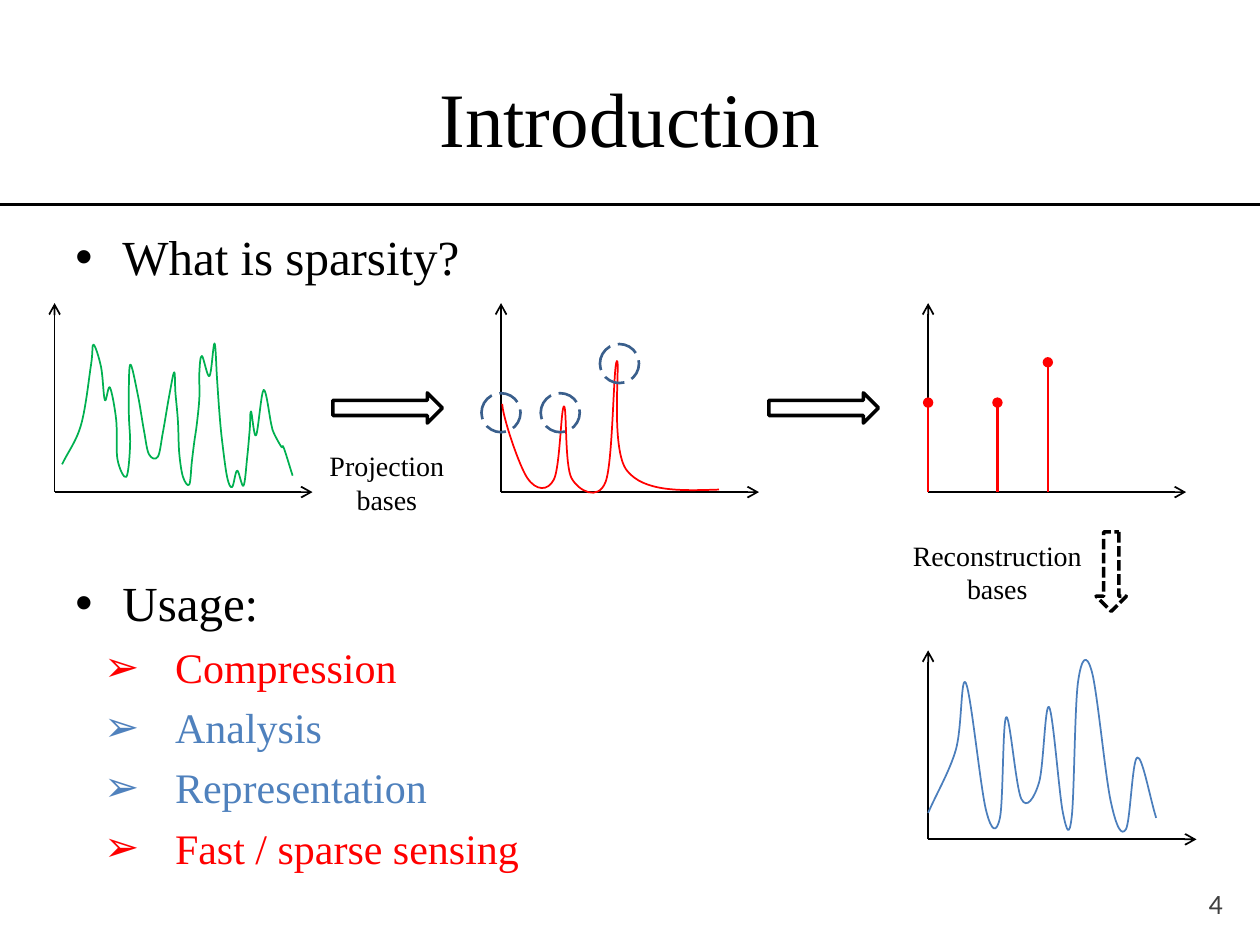
from lxml import etree
from pptx import Presentation
from pptx.dml.color import RGBColor
from pptx.enum.dml import MSO_LINE
from pptx.enum.shapes import MSO_CONNECTOR, MSO_SHAPE
from pptx.enum.text import MSO_ANCHOR, PP_ALIGN
from pptx.oxml.ns import qn
from pptx.util import Cm, Pt

BLACK = RGBColor(0x00, 0x00, 0x00)
GRAY = RGBColor(0x40, 0x40, 0x40)
RED = RGBColor(0xFF, 0x00, 0x00)
GREEN = RGBColor(0x00, 0xB0, 0x50)
BLUE = RGBColor(0x4F, 0x81, 0xBD)
CURVE_BLUE = RGBColor(0x4B, 0x7E, 0xBC)
CIRCLE_BLUE = RGBColor(0x3A, 0x5F, 0x8C)

STRAIGHT = MSO_CONNECTOR.STRAIGHT
RIGHT_ARROW, OVAL = MSO_SHAPE.RIGHT_ARROW, MSO_SHAPE.OVAL
LONG_DASH, SHORT_DASH = MSO_LINE.LONG_DASH, MSO_LINE.SQUARE_DOT
LEFT, CENTER, RIGHT = PP_ALIGN.LEFT, PP_ALIGN.CENTER, PP_ALIGN.RIGHT
TOP, MIDDLE = MSO_ANCHOR.TOP, MSO_ANCHOR.MIDDLE

SERIF = "Times New Roman"
UNIT = Cm(0.0254)

DENSE_SIGNAL = [
    (6, 22), (21, 53), (29, 101), (31, 117), (37, 99), (40, 73), (44, 83), (49, 57), (50, 26), (57, 12),
    (60, 37), (59, 64), (60, 101), (66, 78), (71, 49), (75, 30), (82, 28), (86, 47), (91, 76), (95, 95),
    (96, 79), (98, 56), (99, 31), (102, 12), (107, 6), (109, 24), (111, 40), (113, 54), (115, 75), (115, 95),
    (117, 108), (123, 92), (127, 118), (129, 90), (131, 62), (133, 41), (137, 12), (141, 4), (145, 17), (150, 5),
    (153, 28), (155, 50), (156, 64), (160, 45), (166, 81), (172, 54), (174, 47), (180, 36), (182, 35), (189, 13),
]
PROJECTED_SIGNAL = [
    (1, 70), (21, 11), (42, 10), (50, 68), (56, 11), (83, 8), (92, 104), (100, 17), (173, 2),
]
PROJECTED_HANDLES = [(1, 61), (143, 1)]
REBUILT_SIGNAL = [
    (0, 21), (22, 71), (30, 124), (46, 23), (57, 17), (62, 97), (74, 32), (88, 45), (96, 105),
    (107, 21), (114, 18), (119, 125), (130, 133), (145, 30), (157, 8), (166, 65), (181, 17),
]
PEAKS = [(0, 63), (47, 63), (94, 102)]
PEAK_DIAMETER = 31
STEMS = [(0, 71), (55, 71), (95, 103)]
USAGES = [("Compression", RED), ("Analysis", BLUE), ("Representation", BLUE), ("Fast / sparse sensing", RED)]


def add_line(slide, start, end, color, width, tail=None):
    """Draw a straight line with an optional end marker."""
    line = slide.shapes.add_connector(STRAIGHT, *start, *end)
    line.line.color.rgb = color
    line.line.width = Pt(width)
    if tail:
        etree.SubElement(line.line._get_or_add_ln(), qn("a:tailEnd"), type=tail)
    etree.SubElement(line._element.spPr, qn("a:effectLst"))


def style_outline(shape, color, width):
    """Leave a shape unfilled and set its outline."""
    shape.shadow.inherit = False
    shape.fill.background()
    shape.line.color.rgb = color
    shape.line.width = Pt(width)


def add_outline(slide, kind, box, color, width, dash=None):
    """Draw an unfilled preset shape."""
    shape = slide.shapes.add_shape(kind, *box)
    style_outline(shape, color, width)
    if dash:
        shape.line.dash_style = dash
    return shape


def add_text(slide, box, lines, size, color=BLACK, font=SERIF, align=CENTER, anchor=TOP):
    """Place a text box whose paragraphs share one style."""
    frame = slide.shapes.add_textbox(*box).text_frame
    frame.word_wrap = True
    frame.vertical_anchor = anchor
    frame.text = "\n".join(lines)
    for paragraph in frame.paragraphs:
        paragraph.alignment = align
        paragraph.font.name = font
        paragraph.font.size = Pt(size)
        paragraph.font.color.rgb = color
    return frame


def set_bullet(paragraph, character, margin, indent):
    """Give a paragraph a bullet character and a hanging indent."""
    properties = paragraph._p.get_or_add_pPr()
    properties.set("marL", str(margin))
    properties.set("indent", str(-indent))
    etree.SubElement(properties, qn("a:buFont"), typeface="Arial")
    etree.SubElement(properties, qn("a:buChar"), char=character)


def curve_handles(knots, end_handles):
    """Return the two control points of each smooth segment between knots."""
    last = len(knots) - 1
    slopes = []
    for index in range(last + 1):
        before, after = max(index - 1, 0), min(index + 1, last)
        divisor = 3 * (after - before)
        slopes.append([(b - a) / divisor for a, b in zip(knots[before], knots[after])])
    handles = []
    for index in range(last):
        leaving = tuple(a + m for a, m in zip(knots[index], slopes[index]))
        arriving = tuple(b - n for b, n in zip(knots[index + 1], slopes[index + 1]))
        handles.append([leaving, arriving])
    if end_handles:
        handles[0][0], handles[-1][1] = end_handles
    return handles


def add_curve(slide, knots, end_handles, locate, color):
    """Draw a smooth open curve through the knots."""
    points = [locate(knot) for knot in knots]
    builder = slide.shapes.build_freeform(*points[0])
    builder.add_line_segments(points[1:], close=False)
    curve = builder.convert_to_shape()
    style_outline(curve, color, 1)
    segments = list(curve._element.iter(qn("a:lnTo")))
    for segment, pair in zip(segments, curve_handles(knots, end_handles)):
        segment.tag = qn("a:cubicBezTo")
        for position, handle in enumerate(pair):
            x, y = locate(handle)
            point = etree.Element(qn("a:pt"), x=str(x - curve.left), y=str(y - curve.top))
            segment.insert(position, point)


def add_plot(slide, left, top, width, height, knots=(), color=None, end_handles=None, peaks=(), stems=()):
    """Draw axes with a curve, circled peaks or stems measured from the origin."""
    bottom = top + height

    def locate(point):
        return round(left + point[0] * UNIT), round(bottom - point[1] * UNIT)

    for end in ((left + width, bottom), (left, top)):
        add_line(slide, (left, bottom), end, BLACK, 1, "arrow")
    if knots:
        add_curve(slide, knots, end_handles, locate, color)
    radius = PEAK_DIAMETER / 2
    diameter = PEAK_DIAMETER * UNIT
    for x, y in peaks:
        corner = locate((x - radius, y + radius))
        add_outline(slide, OVAL, (*corner, diameter, diameter), CIRCLE_BLUE, 1.5, LONG_DASH)
    for x, y in stems:
        add_line(slide, locate((x, 0)), locate((x, y)), RED, 1.5, "oval")


def add_header(slide, left, top, width, height):
    """Place the title and the rule below it."""
    add_text(slide, (left + Cm(1.27), top + Cm(0.76), width - Cm(2.54), Cm(3.18)),
             ["Introduction"], 44, anchor=MIDDLE)
    add_line(slide, (left, top + height), (left + width, top + height), BLACK, 1.5)


def add_body(slide, left, top, width, height):
    """Place the two headings and the list of usages."""
    lines = ["What is sparsity?", "Usage:"] + [name for name, _ in USAGES]
    frame = add_text(slide, (left, top, width, height), lines, 28, align=LEFT)
    headings, items = frame.paragraphs[:2], frame.paragraphs[2:]
    for heading, space in zip(headings, (6.4, 164)):
        heading.space_before = Pt(space)
        set_bullet(heading, "•", Cm(0.95), Cm(0.95))
    for item, (_, color) in zip(items, USAGES):
        item.space_before = Pt(5.6)
        item.font.size = Pt(24)
        item.font.color.rgb = color
        set_bullet(item, "➢", Cm(2.01), Cm(1.43))


def add_diagram(slide, left, top):
    """Draw the plots and the arrows that lead from one to the next."""
    width, height = Cm(5.2), Cm(3.81)
    third = left + Cm(17.61)
    add_plot(slide, left, top, width, height, DENSE_SIGNAL, GREEN)
    add_plot(slide, left + Cm(9), top, width, height, PROJECTED_SIGNAL, RED, PROJECTED_HANDLES, PEAKS)
    add_plot(slide, third, top, width, height, stems=STEMS)
    add_plot(slide, third, top + Cm(7), Cm(5.41), height, REBUILT_SIGNAL, CURVE_BLUE)
    for offset in (Cm(5.61), Cm(14.4)):
        add_outline(slide, RIGHT_ARROW, (left + offset, top + Cm(1.81), Cm(2.21), Cm(0.61)), BLACK, 2)
    down = add_outline(slide, RIGHT_ARROW, (left + Cm(20.5), top + Cm(5.11), Cm(1.6), Cm(0.61)),
                       BLACK, 2, SHORT_DASH)
    down.rotation = 90
    add_text(slide, (left + Cm(5.2), top + Cm(2.81), Cm(3), Cm(1.63)), ["Projection", "bases"], 16)
    add_text(slide, (left + Cm(16.81), top + Cm(4.62), Cm(4.39), Cm(1.63)), ["Reconstruction bases"], 16)


def main():
    """Build the slide and save it."""
    presentation = Presentation()
    presentation.slide_width, presentation.slide_height = Cm(25.4), Cm(19.05)
    slide = presentation.slides.add_slide(presentation.slide_layouts[6])
    add_header(slide, 0, 0, presentation.slide_width, Cm(4.12))
    add_body(slide, Cm(1.27), Cm(4.45), Cm(22.86), Cm(14.27))
    add_diagram(slide, Cm(1.1), Cm(6.11))
    add_text(slide, (Cm(18.97), Cm(17.7), Cm(5.93), Cm(1.02)), ["4"], 16, GRAY, "Calibri", RIGHT, MIDDLE)
    presentation.save("out.pptx")


if __name__ == "__main__":
    main()
